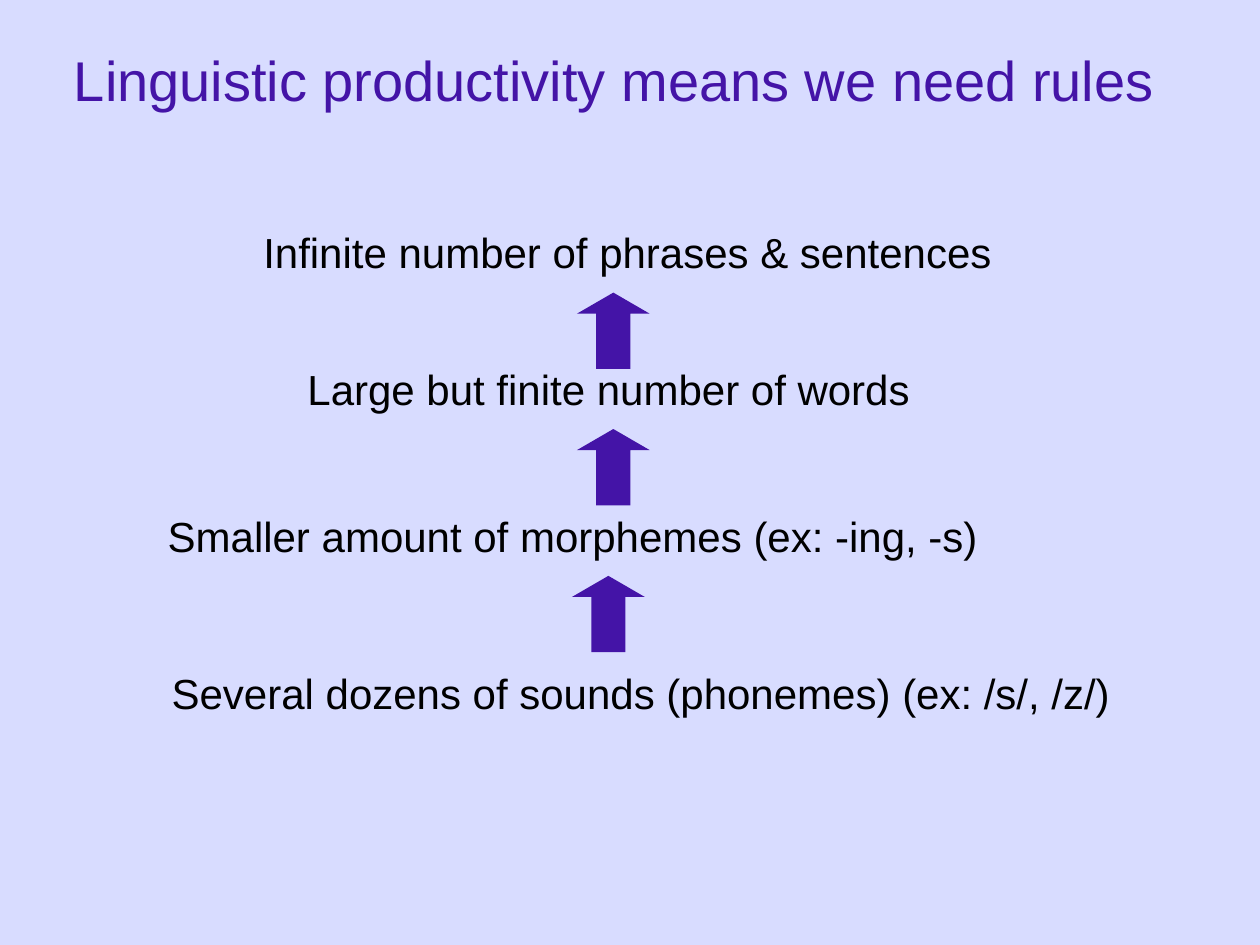
from lxml import etree
from pptx import Presentation
from pptx.dml.color import RGBColor
from pptx.enum.shapes import MSO_SHAPE
from pptx.enum.text import MSO_ANCHOR, PP_ALIGN
from pptx.oxml.ns import qn
from pptx.util import Cm, Pt

UP = MSO_SHAPE.UP_ARROW
CENTER = PP_ALIGN.CENTER
TOP, MIDDLE = MSO_ANCHOR.TOP, MSO_ANCHOR.MIDDLE
FONT = "Arial"
BACK, PURPLE, BLACK = "D8DCFF", "4414A7", "000000"

# Text, left, top, width in cm, from the top level down
LEVELS = [
    ("Infinite number of phrases & sentences", 2.11, 4.45, 21.08),
    ("Large but finite number of words", 3.48, 7.2, 17.58),
    ("Smaller amount of morphemes (ex: -ing, -s)", 1.17, 10.16, 20.75),
    ("Several dozens of sounds (phonemes) (ex: /s/, /z/)", 3.18, 13.34, 19.48),
]
# Left edge of the arrow under each level but the last
ARROWS = [11.73, 11.73, 11.63]
ROW = 1.27
DROP = 1.48


def color(value):
    return RGBColor.from_string(value)


def add_text(slide, text, box, size, tint, anchor=TOP):
    frame = slide.shapes.add_textbox(*map(Cm, box)).text_frame
    frame.word_wrap = True
    frame.vertical_anchor = anchor
    frame.text = text
    line = frame.paragraphs[0]
    line.alignment = CENTER
    font = line.runs[0].font
    font.name, font.size = FONT, Pt(size)
    font.color.rgb = color(tint)


def add_arrow(slide, box):
    arrow = slide.shapes.add_shape(UP, *map(Cm, box))
    arrow.shadow.inherit = False
    arrow.adjustments[0] = 0.5
    arrow.adjustments[1] = 0.29
    arrow.fill.solid()
    arrow.fill.fore_color.rgb = color(PURPLE)
    arrow.line.color.rgb = color(PURPLE)
    arrow.line.width = Pt(1.5)
    # Sharp corners on the outline
    etree.SubElement(arrow.line._get_or_add_ln(), qn("a:miter"), lim="800000")


def add_ladder(slide):
    """Stack the levels, each with an arrow rising to it from the one below."""
    for text, left, top, width in LEVELS:
        add_text(slide, text, (left, top, width, ROW), 24, BLACK)
    for left, level in zip(ARROWS, LEVELS):
        add_arrow(slide, (left, level[2] + DROP, 1.27, 1.48))


def main():
    deck = Presentation()
    deck.slide_width, deck.slide_height = Cm(25.4), Cm(19.05)
    slide = deck.slides.add_slide(deck.slide_layouts[6])
    fill = slide.background.fill
    fill.solid()
    fill.fore_color.rgb = color(BACK)
    add_text(slide, "Linguistic productivity means we need rules",
             (0.64, 0, 23.5, 3.18), 32, PURPLE, MIDDLE)
    add_ladder(slide)
    deck.save("out.pptx")


if __name__ == "__main__":
    main()
